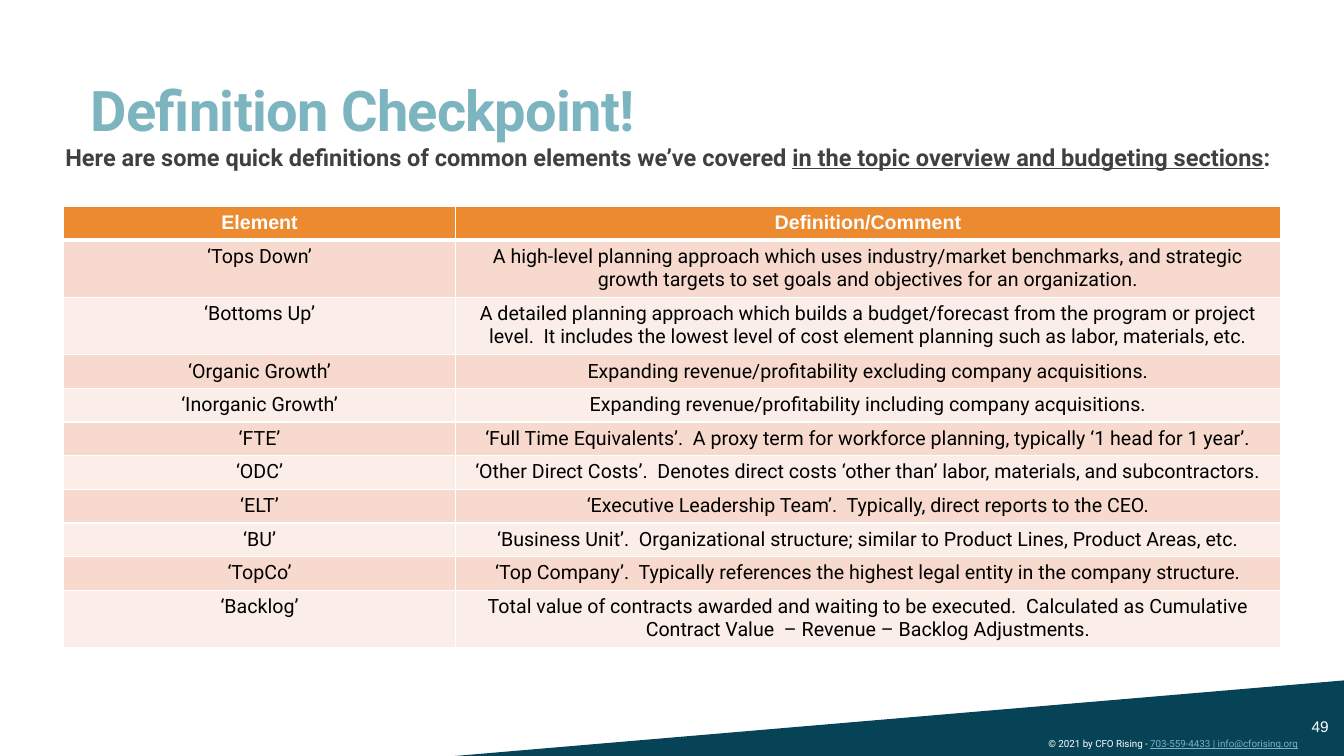
from dataclasses import dataclass

from lxml import etree
from pptx import Presentation
from pptx import util as u
from pptx.dml.color import RGBColor
from pptx.enum import shapes, text
from pptx.oxml import ns

EMU_PER_PX = 9144


@dataclass(frozen=True)
class Theme:
    white: str = "FFFFFF"
    black: str = "000000"
    body: str = "404040"
    accent: str = "7CB4C0"
    footer: str = "074356"
    header: str = "EB8A2F"
    bands: tuple = ("F7DACD", "FBEDE8")
    font: str = "Roboto"
    plain_font: str = "Arial"
    title_size: float = 40
    intro_size: float = 16.8
    table_size: float = 14
    number_size: float = 11
    copyright_size: float = 7


DEFINITIONS = [
    ("‘Tops Down’", "A high-level planning approach which uses industry/market benchmarks, "
     "and strategic growth targets to set goals and objectives for an organization."),
    ("‘Bottoms Up’", "A detailed planning approach which builds a budget/forecast from the "
     "program or project level.  It includes the lowest level of cost element planning such "
     "as labor, materials, etc."),
    ("‘Organic Growth’", "Expanding revenue/profitability excluding company acquisitions."),
    ("‘Inorganic Growth’", "Expanding revenue/profitability including company acquisitions."),
    ("‘FTE’", "‘Full Time Equivalents’.  A proxy term for workforce planning, typically "
     "‘1 head for 1 year’."),
    ("‘ODC’", "‘Other Direct Costs’.  Denotes direct costs ‘other than’ labor, materials, "
     "and subcontractors."),
    ("‘ELT’", "‘Executive Leadership Team’.  Typically, direct reports to the CEO."),
    ("‘BU’", "‘Business Unit’.  Organizational structure; similar to Product Lines, "
     "Product Areas, etc."),
    ("‘TopCo’", "‘Top Company’.  Typically references the highest legal entity in the "
     "company structure."),
    ("‘Backlog’", "Total value of contracts awarded and waiting to be executed.  Calculated as "
     "Cumulative Contract Value  – Revenue – Backlog Adjustments."),
]
HEADER_HEIGHT, ROW_HEIGHT, TALL_ROW_HEIGHT = 31, 33, 56
ONE_LINE_CHARS = 100


def px(*lengths):
    return [u.Emu(length * EMU_PER_PX) for length in lengths]


def set_font(font, size, color, name, bold=False):
    font.size, font.name, font.bold = u.Pt(size), name, bold
    font.color.rgb = RGBColor.from_string(color)


def set_border(cell, side, color, points):
    """Side is L, R, T or B; call before the cell gets its fill."""
    line = etree.SubElement(cell._tc.get_or_add_tcPr(), ns.qn(f"a:ln{side}"),
                            w=str(u.Pt(points)))
    fill = etree.SubElement(line, ns.qn("a:solidFill"))
    etree.SubElement(fill, ns.qn("a:srgbClr"), val=color)


class DefinitionSlide:
    def __init__(self, deck, theme):
        self.theme = theme
        self.slide = deck.slides.add_slide(deck.slide_layouts[5])

    def title(self, wording, *box):
        title = self.slide.shapes.title
        title.left, title.top, title.width, title.height = px(*box)
        frame = title.text_frame
        frame.text = wording
        frame.auto_size = text.MSO_AUTO_SIZE.NONE
        frame.vertical_anchor = text.MSO_ANCHOR.BOTTOM
        paragraph = frame.paragraphs[0]
        paragraph.alignment = text.PP_ALIGN.LEFT
        paragraph.line_spacing = 0.85
        set_font(paragraph.font, self.theme.title_size, self.theme.accent,
                 self.theme.font, bold=True)
        paragraph.runs[0].font._element.set("spc", "-50")

    def text_line(self, box, pieces, size, color, font, bold=False, spacing=1.0,
                  inset=10, anchor=text.MSO_ANCHOR.TOP):
        """Pieces are (wording, underlined, colour or None for the line's colour)."""
        frame = self.slide.shapes.add_textbox(*px(*box)).text_frame
        frame.word_wrap = True
        frame.vertical_anchor = anchor
        frame.margin_left, frame.margin_right = px(inset, 0)
        paragraph = frame.paragraphs[0]
        paragraph.line_spacing = spacing
        set_font(paragraph.font, size, color, font, bold)
        for wording, underlined, own_color in pieces:
            run = paragraph.add_run()
            run.text = wording
            # Explicit run values, since the pieces differ within the line
            set_font(run.font, size, own_color or color, font, bold)
            run.font.underline = underlined

    def footer_wedge(self, *box):
        wedge = self.slide.shapes.add_shape(
            shapes.MSO_SHAPE.RIGHT_TRIANGLE, *px(*box))
        wedge.shadow.inherit = False
        wedge.fill.solid()
        wedge.fill.fore_color.rgb = RGBColor.from_string(self.theme.footer)
        wedge.line.fill.background()
        wedge._element.spPr.xfrm.set("flipH", "1")

    def cell(self, cell, wording, fill, color, font, bold, bottom_border):
        cell.text = wording
        paragraph = cell.text_frame.paragraphs[0]
        paragraph.alignment = text.PP_ALIGN.CENTER
        set_font(paragraph.font, self.theme.table_size, color, font, bold)
        for side in "LRT":
            set_border(cell, side, self.theme.white, 1)
        set_border(cell, "B", self.theme.white, bottom_border)
        cell.fill.solid()
        cell.fill.fore_color.rgb = RGBColor.from_string(fill)

    def definition_table(self, left, top, column_widths, headings, definitions):
        theme = self.theme
        heights = [HEADER_HEIGHT] + [
            TALL_ROW_HEIGHT if len(meaning) > ONE_LINE_CHARS else ROW_HEIGHT
            for _, meaning in definitions]
        table = self.slide.shapes.add_table(
            len(heights), len(column_widths),
            *px(left, top, sum(column_widths), sum(heights))).table
        for column, width in zip(table.columns, px(*column_widths)):
            column.width = width
        for row, height in zip(table.rows, px(*heights)):
            row.height = height
        for cell, heading in zip(table.rows[0].cells, headings):
            self.cell(cell, heading, theme.header, theme.white, theme.plain_font, True, 3)
        for index, definition in enumerate(definitions):
            band = theme.bands[index % 2]
            for cell, wording in zip(table.rows[index + 1].cells, definition):
                self.cell(cell, wording, band, theme.black, theme.font, False, 1)


def main():
    deck = Presentation()
    deck.slide_width, deck.slide_height = u.Inches(13.33), u.Inches(7.5)
    theme = Theme()
    page = DefinitionSlide(deck, theme)
    page.footer_wedge(451, 675, 882, 75)
    page.text_line((1030, 727, 290, 23),
                   [("© 2021\u00a0by CFO Rising - ", False, None),
                    ("703-559-4433 |\u00a0info@cforising.org", True, theme.accent)],
                   theme.copyright_size, theme.white, theme.font)
    page.title("Definition Checkpoint!", 80, 56, 1115, 91)
    page.text_line((1291, 701, 42, 40), [("49", False, None)],
                   theme.number_size, theme.white, theme.plain_font,
                   anchor=text.MSO_ANCHOR.MIDDLE)
    page.text_line((55, 142, 1224, 60),
                   [("Here are some quick definitions of common elements we’ve covered ",
                     False, None),
                    ("in the topic overview and budgeting sections", True, None),
                    (":", False, None)],
                   theme.intro_size, theme.body, theme.font, bold=True, spacing=0.8)
    page.definition_table(63, 205, (389, 818), ("Element", "Definition/Comment"),
                          DEFINITIONS)
    deck.save("out.pptx")


if __name__ == "__main__":
    main()
